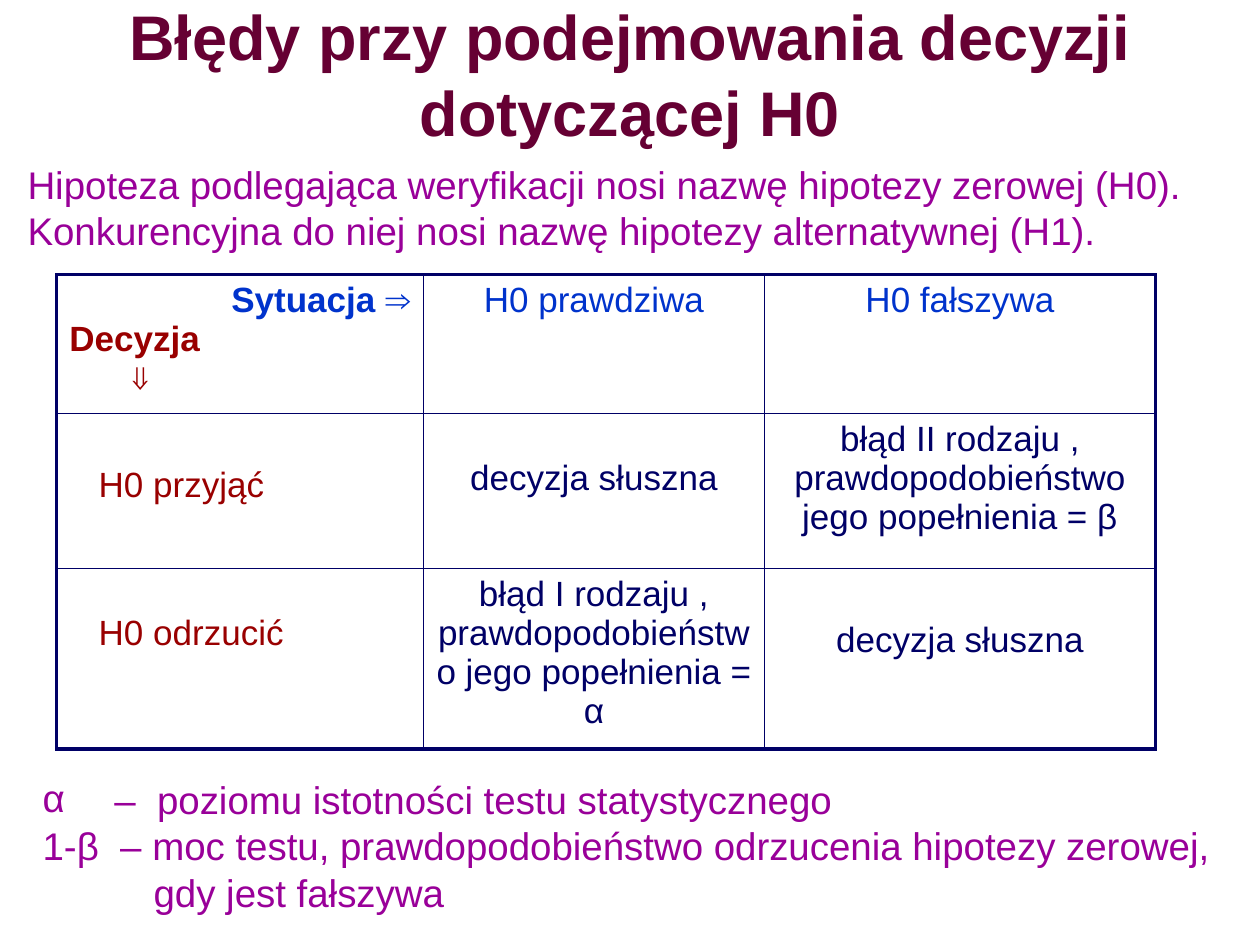
import pptx
import pptx.dml.color
import pptx.enum.text
import pptx.oxml.ns
import pptx.util
from dataclasses import dataclass
from lxml import etree

Pt = pptx.util.Pt
Align = pptx.enum.text.PP_ALIGN
Anchor = pptx.enum.text.MSO_ANCHOR


@dataclass(frozen=True)
class Theme:
    font: str = "Arial"
    title: str = "660033"
    note: str = "990099"
    situation: str = "0033CC"
    decision: str = "990000"
    outcome: str = "000066"
    border: str = "000066"
    title_size: float = 36
    note_size: float = 22
    cell_size: float = 20
    outer_line: float = 2.25
    inner_line: float = 1


THEME = Theme()


def apply_format(target, values):
    for name, value in values.items():
        setattr(target, name, value)


def add_element(parent, tag, **attributes):
    return etree.SubElement(parent, pptx.oxml.ns.qn(tag), attributes)


def indent_paragraph(paragraph, left, first=0, bullet=None):
    properties = paragraph._p.get_or_add_pPr()
    properties.set("marL", str(Pt(left)))
    properties.set("indent", str(Pt(first)))
    if bullet:
        add_element(properties, "a:buFont", typeface=THEME.font)
        add_element(properties, "a:buChar", char=bullet)


def write_paragraph(paragraph, text, size, color, bold=False, align=Align.LEFT):
    paragraph.alignment = align
    run = paragraph.add_run()
    run.text = text
    apply_format(run.font, {"name": THEME.font, "size": Pt(size), "bold": bold})
    run.font.color.rgb = pptx.dml.color.RGBColor.from_string(color)
    return paragraph


def add_text_frame(slide, left, top, width, height, anchor=Anchor.TOP):
    box = slide.shapes.add_textbox(Pt(left), Pt(top), Pt(width), Pt(height))
    apply_format(box.text_frame, {"word_wrap": True, "vertical_anchor": anchor})
    return box.text_frame


def add_title(slide, text):
    frame = add_text_frame(slide, 54, 3.6, 612, 76.3, Anchor.MIDDLE)
    write_paragraph(frame.paragraphs[0], text, THEME.title_size, THEME.title, True, Align.CENTER)


def add_definition(slide, text):
    frame = add_text_frame(slide, 8.64, 88.5, 711.4, 60.5)
    write_paragraph(frame.paragraphs[0], text, THEME.note_size, THEME.note)


def add_legend(slide):
    frame = add_text_frame(slide, 17.3, 440, 711.4, 87)
    level = write_paragraph(frame.paragraphs[0], "–  poziomu istotności testu statystycznego",
                            THEME.note_size, THEME.note)
    indent_paragraph(level, 41, -41, "α")
    power = write_paragraph(
        frame.add_paragraph(),
        "1-β  – moc testu, prawdopodobieństwo odrzucenia hipotezy zerowej, gdy jest fałszywa",
        THEME.note_size, THEME.note)
    indent_paragraph(power, 63.4, -63.4)


def set_borders(cell, outer_sides):
    properties = cell._tc.get_or_add_tcPr()
    for side, outer in outer_sides.items():
        width = THEME.outer_line if outer else THEME.inner_line
        line = add_element(properties, "a:ln" + side, w=str(Pt(width)))
        add_element(add_element(line, "a:solidFill"), "a:srgbClr", val=THEME.border)


def fill_corner(cell):
    frame = cell.text_frame
    write_paragraph(frame.paragraphs[0], "Sytuacja ⇒", THEME.cell_size, THEME.situation, True, Align.RIGHT)
    write_paragraph(frame.add_paragraph(), "Decyzja", THEME.cell_size, THEME.decision, True)
    arrow = write_paragraph(frame.add_paragraph(), "⇓", THEME.cell_size, THEME.decision, True)
    indent_paragraph(arrow, 33.4)


def add_decision_table(slide):
    widths = [209.5, 195.1, 223.2]
    heights = [79.2, 88.6, 103]
    table = slide.shapes.add_table(len(heights), len(widths), Pt(32.4), Pt(157),
                                   Pt(sum(widths)), Pt(sum(heights))).table
    apply_format(table, {"first_row": False, "horz_banding": False})
    for column, width in zip(table.columns, widths):
        column.width = Pt(width)
    for row, height in zip(table.rows, heights):
        row.height = Pt(height)

    for row in range(len(heights)):
        for column in range(len(widths)):
            cell = table.cell(row, column)
            set_borders(cell, {"L": column == 0, "R": column == len(widths) - 1,
                               "T": row == 0, "B": row == len(heights) - 1})
            cell.fill.background()

    fill_corner(table.cell(0, 0))
    heading = {"color": THEME.situation, "align": Align.CENTER}
    decision = {"color": THEME.decision}
    outcome = {"color": THEME.outcome, "align": Align.CENTER}
    error = "błąd {} rodzaju , prawdopodobieństwo jego popełnienia = {}"
    contents = [
        (0, 1, "H0 prawdziwa", heading, {}),
        (0, 2, "H0 fałszywa", heading, {}),
        (1, 0, "H0 przyjąć", decision, {"margin_left": Pt(24), "margin_top": Pt(30)}),
        (1, 1, "decyzja słuszna", outcome, {"margin_top": Pt(26)}),
        (1, 2, error.format("II", "β"), outcome, {}),
        (2, 0, "H0 odrzucić", decision, {"margin_left": Pt(24), "margin_top": Pt(26)}),
        (2, 1, error.format("I", "α"), outcome, {}),
        (2, 2, "decyzja słuszna", outcome, {"margin_top": Pt(30)}),
    ]
    for row, column, text, style, margins in contents:
        cell = table.cell(row, column)
        apply_format(cell, margins)
        write_paragraph(cell.text_frame.paragraphs[0], text, THEME.cell_size, **style)


def main():
    presentation = pptx.Presentation()
    apply_format(presentation, {"slide_width": Pt(720), "slide_height": Pt(540)})
    slide = presentation.slides.add_slide(presentation.slide_layouts[6])
    add_title(slide, "Błędy przy podejmowania decyzji dotyczącej H0")
    add_decision_table(slide)
    add_legend(slide)
    add_definition(slide, "Hipoteza podlegająca weryfikacji nosi nazwę hipotezy zerowej (H0). "
                          "Konkurencyjna do niej nosi nazwę hipotezy alternatywnej (H1).")
    presentation.save("out.pptx")


if __name__ == "__main__":
    main()
